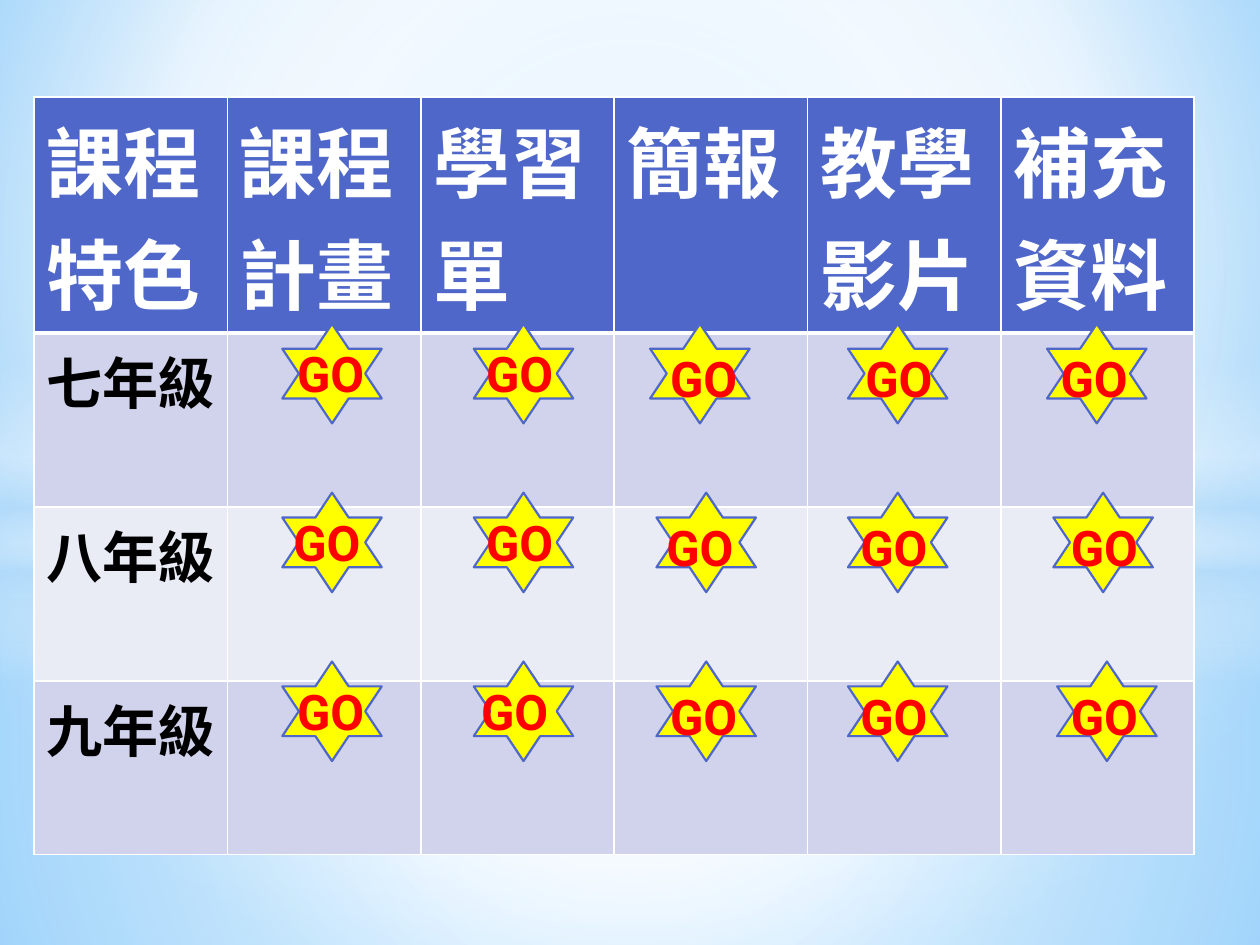
"""Build the course table with a star button in each cell."""
from lxml.etree import SubElement
from pptx import Presentation
from pptx.dml.color import RGBColor
from pptx.enum.shapes import MSO_SHAPE
from pptx.enum.text import MSO_AUTO_SIZE, PP_ALIGN
from pptx.oxml import parse_xml
from pptx.oxml.ns import nsdecls, qn
from pptx.util import Inches, Pt

HUES = {"sky": "9ED5FF", "deep": "5BB9FF", "pale": "B4DCFA", "white": "FFFFFF",
        "head": "4E67C8", "odd": "D0D3EB", "even": "E9EBF5",
        "star": "FFFF00", "go": "FF0000", "black": "000000"}


def shade(node, stops, focus=None):
    """Swap the solid fill in node for a gradient."""
    marks = "".join(
        f'<a:gs pos="{at * 1000}"><a:srgbClr val="{HUES[hue]}">'
        f'<a:alpha val="{alpha * 1000}"/></a:srgbClr></a:gs>'
        for at, hue, alpha in stops)
    if focus:
        sides = " ".join(f'{side}="{value * 1000}"' for side, value in zip("ltrb", focus))
        form = f'<a:path path="circle"><a:fillToRect {sides}/></a:path>'
    else:
        form = '<a:lin ang="5400000" scaled="0"/>'
    old = next(node.iter(qn("a:solidFill")))
    old.getparent().replace(old, parse_xml(
        f'<a:gradFill rotWithShape="1" {nsdecls("a")}><a:gsLst>{marks}</a:gsLst>{form}</a:gradFill>'))


def write(para, words, size, face, hue):
    """Add one bold run to a paragraph."""
    run = para.add_run()
    run.text = words
    run.font.size = Pt(size)
    run.font.name = face
    run.font.bold = True
    run.font.color.rgb = RGBColor.from_string(HUES[hue])


deck = Presentation()
deck.slide_width, deck.slide_height = Inches(10), Inches(7.5)
slide = deck.slides.add_slide(deck.slide_layouts[6])
shapes = slide.shapes

slide.background.fill.solid()
shade(slide.element, [(0, "sky", 100), (60, "white", 100), (100, "deep", 100)], (20, 10, 20, 60))

mid = (50, 50, 50, 50)
layers = [
    (MSO_SHAPE.RECTANGLE, 4.23, 3.27, mid,
     [(0, "white", 91), (37, "white", 76), (100, "pale", 79)]),
    (MSO_SHAPE.RECTANGLE, 0, 4.23, mid,
     [(0, "white", 89), (48, "white", 62), (100, "pale", 79)]),
    (MSO_SHAPE.RECTANGLE, 2.9, 2.5, None,
     [(0, "white", 0), (29, "white", 30), (45, "pale", 40),
      (55, "white", 26), (65, "pale", 60), (100, "white", 0)]),
    (MSO_SHAPE.OVAL, 1.75, 5.58, mid, [(0, "white", 100), (54, "white", 0)]),
]
for kind, top, height, focus, stops in layers:
    layer = shapes.add_shape(kind, 0, Inches(top), Inches(10), Inches(height))
    layer.shadow.inherit = False
    layer.fill.solid()
    shade(layer.element, stops, focus)
    layer.line.fill.background()

heads = ["課程\n特色", "課程計畫", "學習單", "簡報", "教學影片", "補充資料"]
grades = ["七年級", "八年級", "九年級"]
rows = [heads] + [[grade] + [""] * 5 for grade in grades]
table = shapes.add_table(4, 6, Inches(0.27), Inches(0.77), Inches(9.21), Inches(5.52)).table
for r, row in enumerate(rows):
    for c, words in enumerate(row):
        cell = table.cell(r, c)
        props = cell._tc.get_or_add_tcPr()
        for side in "LRTB":
            thick = (r, side) in [(0, "B"), (1, "T")]
            edge = SubElement(props, qn(f"a:ln{side}"), w=str(Pt(3 if thick else 1)))
            paint = SubElement(edge, qn("a:solidFill"))
            SubElement(paint, qn("a:srgbClr"), val=HUES["white"])
        cell.fill.solid()
        tint = "head" if r == 0 else "odd" if r % 2 else "even"
        cell.fill.fore_color.rgb = RGBColor.from_string(HUES[tint])
        frame = cell.text_frame
        for n, line in enumerate(words.split("\n")):
            para = frame.add_paragraph() if n else frame.paragraphs[0]
            if r:
                para.alignment = PP_ALIGN.RIGHT
            if line:
                write(para, line, 32 if r else 44, "Arial", "black" if r else "white")

stars = [[2.24, 3.76, 5.16, 6.73, 8.31],
         [2.24, 3.76, 5.21, 6.73, 8.36],
         [2.24, 3.76, 5.21, 6.73, 8.39]]
labels = [[2.26, 3.76, 5.22, 6.77, 8.32],
          [2.23, 3.76, 5.19, 6.73, 8.4],
          [2.26, 3.72, 5.22, 6.73, 8.4]]
for r in range(3):
    top = 2.57 + 1.34 * r
    for c in range(5):
        star = shapes.add_shape(MSO_SHAPE.STAR_6_POINT, Inches(stars[r][c]), Inches(top),
                                Inches(0.79), Inches(0.79))
        star.shadow.inherit = False
        star.fill.solid()
        star.fill.fore_color.rgb = RGBColor.from_string(HUES["star"])
        star.line.color.rgb = RGBColor.from_string(HUES["head"])
        star.line.width = Pt(1.25)
        drop = 0.11 if c < 2 else 0.15
        label = shapes.add_textbox(Inches(labels[r][c]), Inches(top + drop),
                                   Inches(0.87), Inches(0.57))
        label.text_frame.word_wrap = True
        label.text_frame.auto_size = MSO_AUTO_SIZE.SHAPE_TO_FIT_TEXT
        write(label.text_frame.paragraphs[0], "GO", 28, "Roboto", "go")

deck.save("out.pptx")
